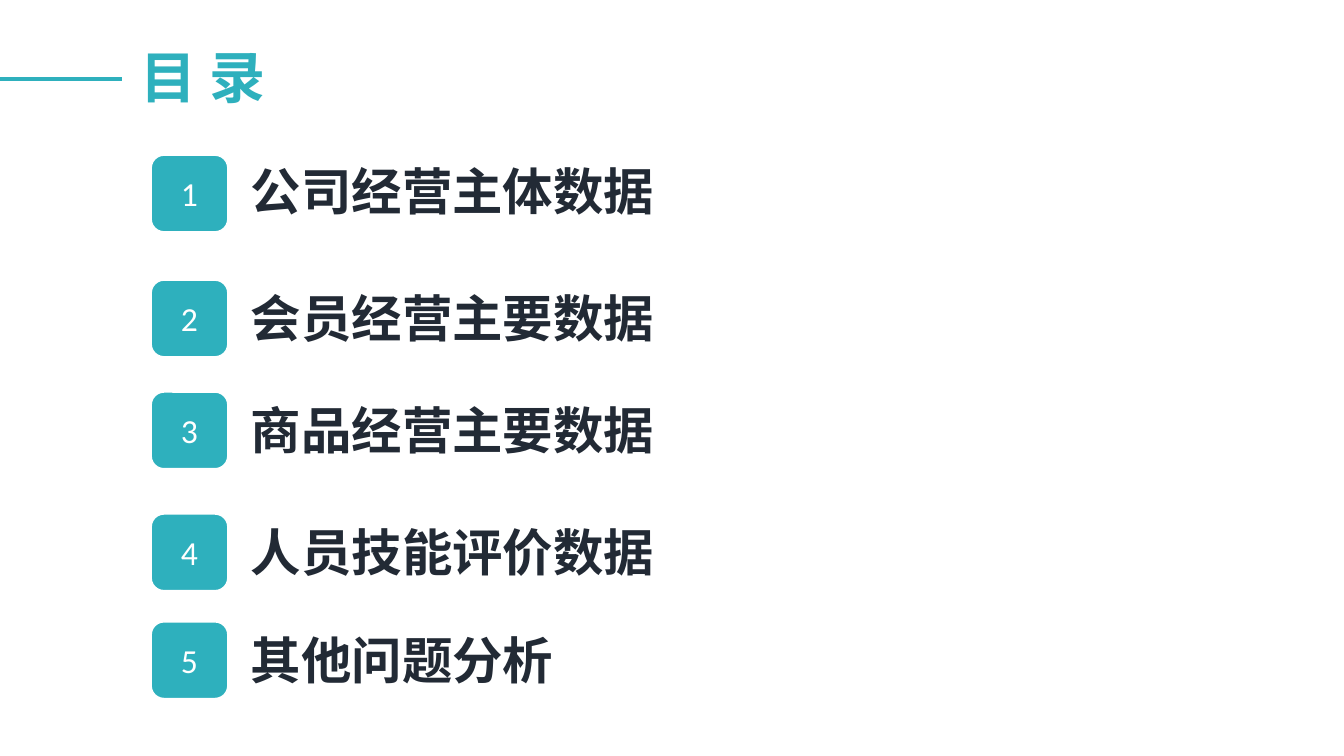
from lxml.etree import SubElement
from pptx import Presentation
from pptx.dml.color import RGBColor
from pptx.enum.shapes import MSO_CONNECTOR, MSO_SHAPE
from pptx.enum.text import MSO_ANCHOR, MSO_AUTO_SIZE, PP_ALIGN
from pptx.oxml.ns import qn
from pptx.util import Inches, Pt

COLORS = {"teal": "2EB0BD", "ink": "222A35", "white": "FFFFFF"}
LATIN, CJK = "Calibri", "Noto Sans CJK SC"

BADGE_LEFT, BADGE_SIZE = 1.5, 0.76
LABEL_LEFT, LABEL_HEIGHT = 2.39, 0.74
CHAR_WIDTH, LABEL_MARGINS = 0.5, 0.2

# badge top, label top, label font, label
CHAPTERS = [
    (1.54, 1.54, LATIN, "公司经营主体数据"),
    (2.78, 2.8, CJK, "会员经营主要数据"),
    (3.89, 3.91, CJK, "商品经营主要数据"),
    (5.1, 5.12, CJK, "人员技能评价数据"),
    (6.17, 6.19, CJK, "其他问题分析"),
]


def rgb(name):
    return RGBColor.from_string(COLORS[name])


class ContentsSlide:
    def __init__(self, slide):
        self.slide = slide

    def set_text(self, shape, text, size, color, font, bold=False):
        shape.text_frame.text = text
        run = shape.text_frame.paragraphs[0].runs[0]
        run.font.size = Pt(size)
        run.font.bold = bold
        run.font.color.rgb = rgb(color)
        run.font.name = font
        SubElement(run.font._element, qn("a:ea")).set("typeface", CJK)

    def heading(self, parent, text, box, size, color, font):
        """Bold one-line text that does not wrap."""
        heading = parent.add_textbox(*map(Inches, box))
        self.set_text(heading, text, size, color, font, bold=True)
        heading.text_frame.word_wrap = False
        heading.text_frame.auto_size = MSO_AUTO_SIZE.SHAPE_TO_FIT_TEXT

    def rule(self, start, end, y):
        rule = self.slide.shapes.add_connector(
            MSO_CONNECTOR.STRAIGHT, Inches(start), Inches(y), Inches(end), Inches(y))
        rule.line.color.rgb = rgb("teal")
        rule.line.width = Pt(3)
        SubElement(rule._element.spPr, qn("a:effectLst"))

    def badge(self, parent, number, top):
        badge = parent.add_shape(
            MSO_SHAPE.ROUNDED_RECTANGLE, Inches(BADGE_LEFT), Inches(top),
            Inches(BADGE_SIZE), Inches(BADGE_SIZE))
        badge.shadow.inherit = False
        badge.fill.solid()
        badge.fill.fore_color.rgb = rgb("teal")
        badge.line.color.rgb = rgb("white")
        badge.line.width = Pt(1)
        self.set_text(badge, str(number), 24, "white", LATIN)
        badge.text_frame.vertical_anchor = MSO_ANCHOR.MIDDLE
        badge.text_frame.paragraphs[0].alignment = PP_ALIGN.CENTER

    def chapter(self, number, badge_top, label_top, font, label):
        """Numbered badge grouped with its label."""
        row = self.slide.shapes.add_group_shape().shapes
        self.badge(row, number, badge_top)
        width = len(label) * CHAR_WIDTH + LABEL_MARGINS
        self.heading(row, label, (LABEL_LEFT, label_top, width, LABEL_HEIGHT),
                     36, "ink", font)


def main():
    deck = Presentation()
    deck.slide_width, deck.slide_height = Inches(13.33), Inches(7.5)
    contents = ContentsSlide(deck.slides.add_slide(deck.slide_layouts[6]))
    contents.heading(contents.slide.shapes, "目 录", (1.3, 0.37, 1.45, 0.77),
                     40, "teal", LATIN)
    contents.rule(0, 1.21, 0.78)
    for number, chapter in enumerate(CHAPTERS, start=1):
        contents.chapter(number, *chapter)
    deck.save("out.pptx")


if __name__ == "__main__":
    main()
